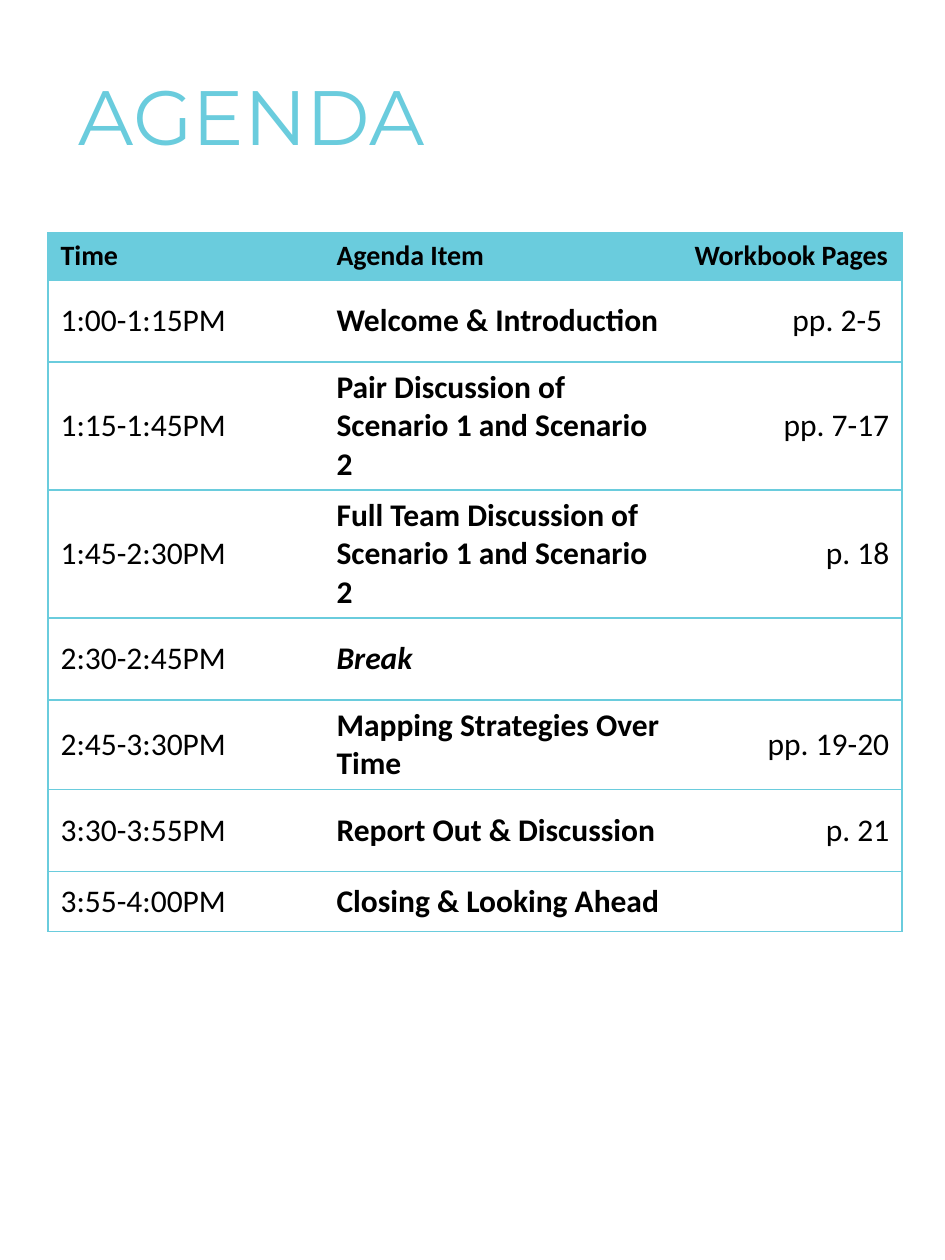
import pptx
import pptx.dml.color
import pptx.enum.text
import pptx.oxml
import pptx.oxml.ns
import pptx.util

EMU_PER_PX = 914400 / 126
COLORS = {"accent": "6ACCDD", "text": "000000"}
ALIGN = pptx.enum.text.PP_ALIGN
ANCHOR = pptx.enum.text.MSO_ANCHOR


def px(*lengths):
    return [pptx.util.Emu(round(n * EMU_PER_PX)) for n in lengths]


def format_font(font, color, **values):
    for name, value in values.items():
        setattr(font, name, value)
    font.color.rgb = pptx.dml.color.RGBColor.from_string(COLORS[color])


# Page
deck = pptx.Presentation()
deck.slide_width, deck.slide_height = px(945, 1260)
slide = deck.slides.add_slide(deck.slide_layouts[5])

# Heading
heading = slide.shapes.title
heading.left, heading.top, heading.width, heading.height = px(66, 67, 815, 108)
heading.text_frame.text = "AGENDA"
heading.text_frame.auto_size = pptx.enum.text.MSO_AUTO_SIZE.NONE
heading.text_frame.vertical_anchor = ANCHOR.MIDDLE
heading_line = heading.text_frame.paragraphs[0]
heading_line.alignment = ALIGN.LEFT
heading_line.line_spacing = 0.9
format_font(heading_line.runs[0].font, "accent",
            name="Montserrat", size=pptx.util.Pt(44))

# Agenda: row height, time, item, workbook pages
agenda = [
    (45, "Time", "Agenda Item", "Workbook Pages"),
    (82, "1:00-1:15PM", "Welcome & Introduction", "pp. 2-5 "),
    (60, "1:15-1:45PM", "Pair Discussion of Scenario 1 and Scenario 2", "pp. 7-17"),
    (82, "1:45-2:30PM", "Full Team Discussion of Scenario 1 and Scenario 2", "p. 18"),
    (82, "2:30-2:45PM", "Break", ""),
    (60, "2:45-3:30PM", "Mapping Strategies Over Time", "pp. 19-20"),
    (82, "3:30-3:55PM", "Report Out & Discussion", "p. 21"),
    (60, "3:55-4:00PM", "Closing & Looking Ahead", ""),
]
column_widths = px(276, 358, 220)
schedule = slide.shapes.add_table(
    len(agenda), len(column_widths), *px(48, 233, 854, 553)).table
schedule.first_row = schedule.horz_banding = False
for column, width in zip(schedule.columns, column_widths):
    column.width = width

for r, (height, *entries) in enumerate(agenda):
    schedule.rows[r].height = px(height)[0]
    for c, entry in enumerate(entries):
        cell = schedule.cell(r, c)

        # Borders: every horizontal, and the outer verticals
        sides = {"L": c == 0, "R": c == len(entries) - 1, "T": True, "B": True}
        for side, visible in sides.items():
            paint = (f'<a:solidFill><a:srgbClr val="{COLORS["accent"]}"/></a:solidFill>'
                     if visible else "<a:noFill/>")
            cell._tc.get_or_add_tcPr().append(pptx.oxml.parse_xml(
                f'<a:ln{side} {pptx.oxml.ns.nsdecls("a")} w="12700">{paint}</a:ln{side}>'))

        # Fill
        if r == 0:
            cell.fill.solid()
            cell.fill.fore_color.rgb = pptx.dml.color.RGBColor.from_string(COLORS["accent"])
        else:
            cell.fill.background()
            cell.vertical_anchor = ANCHOR.MIDDLE

        # Text
        if entry:
            cell.text = entry
            line = cell.text_frame.paragraphs[0]
            line.alignment = ALIGN.RIGHT if r > 0 and c == 2 else ALIGN.LEFT
            format_font(line.runs[0].font, "text", name="Calibri",
                        size=pptx.util.Pt(18 if r else 16),
                        bold=r == 0 or c == 1, italic=entry == "Break")

deck.save("out.pptx")
